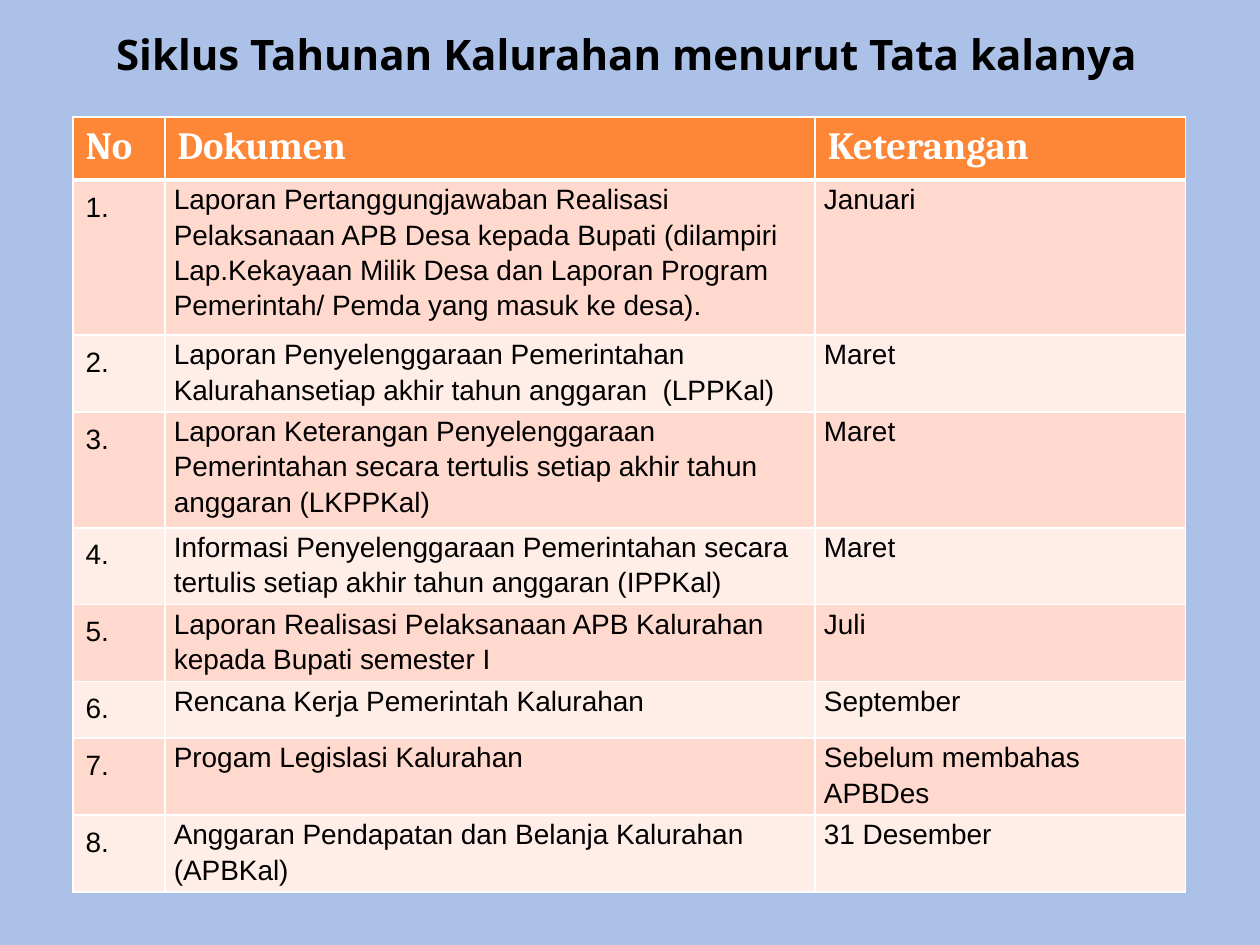
from dataclasses import dataclass
from typing import NamedTuple

from lxml import etree
from pptx import Presentation
from pptx.dml.color import RGBColor
from pptx.enum.text import MSO_ANCHOR, PP_ALIGN
from pptx.oxml.ns import qn
from pptx.util import Inches, Pt

CENTER = PP_ALIGN.CENTER
MIDDLE = MSO_ANCHOR.MIDDLE
BLANK_LAYOUT = 6


class TextStyle(NamedTuple):
    font: str
    size: float
    color: str
    bold: bool = False
    line_spacing: float = 1.0


class Insets(NamedTuple):
    side: float
    end: float


@dataclass(frozen=True)
class Theme:
    background: str = "ACC1E8"
    header_fill: str = "FE8637"
    band_fills: tuple[str, str] = ("FFD9CE", "FFEDE8")
    border: str = "FFFFFF"
    thin: float = 1
    thick: float = 3
    title: TextStyle = TextStyle("Noto Sans", 24, "000000", True)
    header: TextStyle = TextStyle("Cambria", 22, "FFFFFF", True)
    body: TextStyle = TextStyle("Arial", 16, "000000", False, 1.14)
    roomy: Insets = Insets(0.1, 0.06)
    tight: Insets = Insets(0.07, 0)


class Document(NamedTuple):
    name: str
    due: str
    row_height: float


THEME = Theme()
TITLE = "Siklus Tahunan Kalurahan menurut Tata kalanya"
HEADINGS = ("No", "Dokumen", "Keterangan")
COLUMN_WIDTHS = (0.73, 5.16, 2.94)
HEADER_HEIGHT = 0.5
DOCUMENTS = (
    Document("Laporan Pertanggungjawaban Realisasi Pelaksanaan APB Desa kepada Bupati "
             "(dilampiri Lap.Kekayaan Milik Desa dan Laporan Program Pemerintah/ Pemda "
             "yang masuk ke desa).", "Januari", 1.23),
    Document("Laporan Penyelenggaraan Pemerintahan Kalurahansetiap akhir tahun "
             "anggaran  (LPPKal)", "Maret", 0.61),
    Document("Laporan Keterangan Penyelenggaraan Pemerintahan secara tertulis setiap "
             "akhir tahun anggaran (LKPPKal)", "Maret", 0.92),
    Document("Informasi Penyelenggaraan Pemerintahan secara tertulis setiap akhir tahun "
             "anggaran (IPPKal)", "Maret", 0.61),
    Document("Laporan Realisasi Pelaksanaan APB Kalurahan kepada Bupati semester I",
             "Juli", 0.61),
    Document("Rencana Kerja Pemerintah Kalurahan", "September", 0.45),
    Document("Progam Legislasi Kalurahan", "Sebelum membahas APBDes", 0.61),
    Document("Anggaran Pendapatan dan Belanja Kalurahan (APBKal)", "31 Desember", 0.61),
)


def write(text_frame, text: str, style: TextStyle) -> None:
    text_frame.text = text
    paragraph = text_frame.paragraphs[0]
    paragraph.line_spacing = style.line_spacing
    font = paragraph.runs[0].font
    font.name, font.size, font.bold = style.font, Pt(style.size), style.bold
    font.color.rgb = RGBColor.from_string(style.color)


def set_borders(cell, widths: dict[str, float]) -> None:
    """Draw the cell edges; the lines must come before the fill in tcPr."""
    properties = cell._tc.get_or_add_tcPr()
    for index, (side, width) in enumerate(widths.items()):
        line = etree.Element(qn(f"a:ln{side}"), w=str(Pt(width)))
        fill = etree.SubElement(line, qn("a:solidFill"))
        etree.SubElement(fill, qn("a:srgbClr"), val=THEME.border)
        properties.insert(index, line)


def fill_cell(cell, text: str, style: TextStyle, fill: str, insets: Insets,
              top: float, bottom: float) -> None:
    write(cell.text_frame, text, style)
    cell.margin_left = cell.margin_right = Inches(insets.side)
    cell.margin_top = cell.margin_bottom = Inches(insets.end)
    cell.fill.solid()
    cell.fill.fore_color.rgb = RGBColor.from_string(fill)
    set_borders(cell, {"L": THEME.thin, "R": THEME.thin, "T": top, "B": bottom})


def add_title(slide) -> None:
    box = slide.shapes.add_textbox(Inches(0.47), Inches(0.08), Inches(9), Inches(0.7))
    frame = box.text_frame
    frame.word_wrap = True
    frame.vertical_anchor = MIDDLE
    write(frame, TITLE, THEME.title)
    frame.paragraphs[0].alignment = CENTER


def add_document_table(slide) -> None:
    heights = (HEADER_HEIGHT, *(document.row_height for document in DOCUMENTS))
    table = slide.shapes.add_table(
        len(heights), len(COLUMN_WIDTHS), Inches(0.58), Inches(0.93),
        Inches(sum(COLUMN_WIDTHS)), Inches(sum(heights))).table
    for column, width in zip(table.columns, COLUMN_WIDTHS):
        column.width = Inches(width)
    for row, height in zip(table.rows, heights):
        row.height = Inches(height)

    for column, heading in enumerate(HEADINGS):
        fill_cell(table.cell(0, column), heading, THEME.header, THEME.header_fill,
                  THEME.roomy, THEME.thin, THEME.thick)
    for number, document in enumerate(DOCUMENTS, start=1):
        fill = THEME.band_fills[(number - 1) % 2]
        top = THEME.thick if number == 1 else THEME.thin
        for column, text in enumerate((f"{number}.", document.name, document.due)):
            insets = THEME.roomy if column == 0 else THEME.tight
            fill_cell(table.cell(number, column), text, THEME.body, fill, insets,
                      top, THEME.thin)


def main() -> None:
    presentation = Presentation()
    presentation.slide_width, presentation.slide_height = Inches(10), Inches(7.5)
    slide = presentation.slides.add_slide(presentation.slide_layouts[BLANK_LAYOUT])
    slide.background.fill.solid()
    slide.background.fill.fore_color.rgb = RGBColor.from_string(THEME.background)
    add_title(slide)
    add_document_table(slide)
    presentation.save("out.pptx")


if __name__ == "__main__":
    main()
